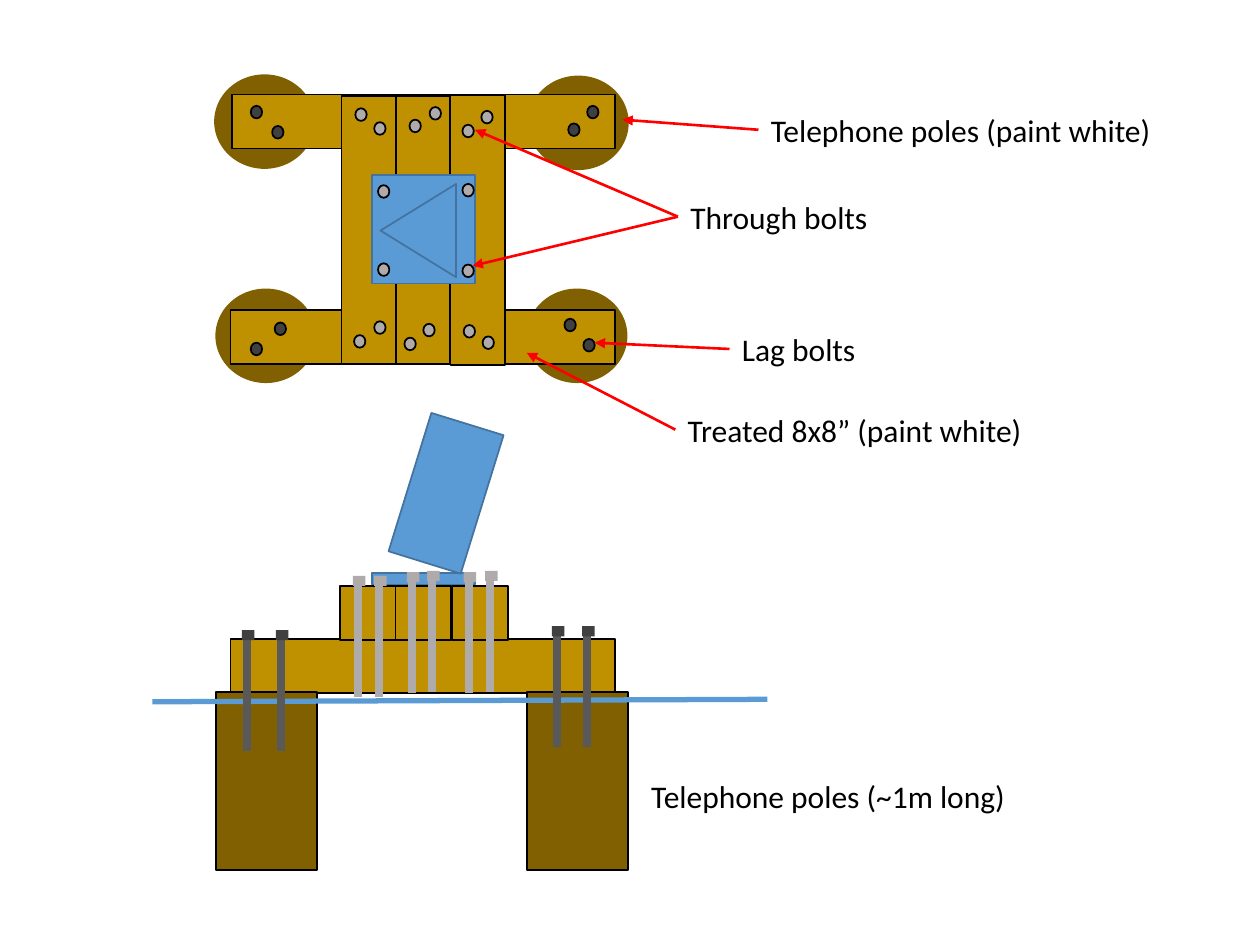
from lxml import etree
from pptx import Presentation
from pptx.dml.color import RGBColor
from pptx.enum.shapes import MSO_CONNECTOR, MSO_SHAPE
from pptx.enum.text import MSO_AUTO_SIZE
from pptx.oxml.ns import qn
from pptx.util import Inches, Pt

RECT = MSO_SHAPE.RECTANGLE
OVAL = MSO_SHAPE.OVAL
TRIANGLE = MSO_SHAPE.ISOSCELES_TRIANGLE
STRAIGHT = MSO_CONNECTOR.STRAIGHT
FIT_SHAPE = MSO_AUTO_SIZE.SHAPE_TO_FIT_TEXT

POLE = RGBColor(0x80, 0x60, 0x00)
TIMBER = RGBColor(0xBF, 0x90, 0x00)
BLUE = RGBColor(0x5B, 0x9B, 0xD5)
BLUE_EDGE = RGBColor(0x43, 0x73, 0x9E)
LAG = RGBColor(0x40, 0x40, 0x40)
LAG_SHAFT = RGBColor(0x59, 0x59, 0x59)
THROUGH = RGBColor(0xAF, 0xAB, 0xAB)
RED = RGBColor(0xFF, 0x00, 0x00)
BLACK = RGBColor(0x00, 0x00, 0x00)


def add_part(shapes, kind, box, fill, edge=None, rotation=0):
    sp = shapes.add_shape(kind, *(Inches(v) for v in box))
    sp.shadow.inherit = False
    sp.rotation = rotation
    sp.fill.solid()
    sp.fill.fore_color.rgb = fill
    if edge is None:
        sp.line.fill.background()
    else:
        sp.line.color.rgb = edge
        sp.line.width = Pt(1)
    return sp


def add_line(shapes, start, end, color, width):
    line = shapes.add_connector(STRAIGHT, *(Inches(v) for v in start + end))
    line.line.color.rgb = color
    line.line.width = Pt(width)
    etree.SubElement(line._element.spPr, qn("a:effectLst"))
    return line


prs = Presentation()
prs.slide_width = Inches(10)
prs.slide_height = Inches(7.5)
s = prs.slides.add_slide(prs.slide_layouts[6])
shapes = s.shapes

# Top view: poles, beams, planks and the instrument plate
for x, y in [(1.7, 0.59), (4.19, 0.6), (1.71, 2.29), (4.18, 2.29)]:
    add_part(shapes, OVAL, (x, y, 0.8, 0.75), POLE)
for x, y, w in [(1.84, 0.75, 3.04), (1.83, 2.46, 3.05)]:
    add_part(shapes, RECT, (x, y, w, 0.43), TIMBER, BLACK)
for x, length in [(1.86, 2.13), (2.72, 2.14), (2.29, 2.13)]:
    add_part(shapes, RECT, (x, 1.61, length, 0.43), TIMBER, BLACK, 90)
add_part(shapes, RECT, (2.95, 1.39, 0.82, 0.86), BLUE, BLUE_EDGE)
add_part(shapes, TRIANGLE, (2.95, 1.53, 0.74, 0.6), BLUE, BLUE_EDGE, 270)

# Top view: bolt heads
lag_heads = [(1.99, 0.84), (2.16, 1), (1.99, 2.72), (2.18, 2.56),
             (4.66, 0.84), (4.51, 0.98), (4.63, 2.69), (4.48, 2.53)]
through_heads = [(2.82, 0.86), (2.97, 0.97), (3.25, 0.95), (3.41, 0.85),
                 (3.67, 0.99), (3.82, 0.88),
                 (3, 1.47), (3.67, 1.46), (3, 2.09), (3.67, 2.1),
                 (2.81, 2.66), (2.97, 2.55), (3.21, 2.68), (3.36, 2.57),
                 (3.68, 2.58), (3.83, 2.67)]
for heads, color in [(lag_heads, LAG), (through_heads, THROUGH)]:
    for x, y in heads:
        add_part(shapes, OVAL, (x, y, 0.09, 0.1), color, BLACK)

# Side view: timbers, poles, ground line and instrument
add_part(shapes, RECT, (1.83, 5.07, 3.05, 0.43), TIMBER, BLACK)
for x in (2.7, 3.14, 3.59):
    add_part(shapes, RECT, (x, 4.65, 0.44, 0.43), TIMBER, BLACK)
for x in (1.41, 3.88):
    add_part(shapes, RECT, (x, 5.8, 1.41, 0.8), POLE, BLACK, 90)
add_line(shapes, (1.21, 5.57), (6.09, 5.55), BLUE, 3)
add_part(shapes, RECT, (2.95, 4.55, 0.82, 0.09), BLUE, BLUE_EDGE)
add_part(shapes, RECT, (3.24, 3.34, 0.6, 1.15), BLUE, BLUE_EDGE, 17.2)

# Side view: bolts, each a shaft with a head on top
lag_bolts = [(1.92, 5), (2.19, 5), (4.38, 4.97), (4.62, 4.97)]
through_bolts = [(2.8, 4.57), (2.97, 4.57), (3.23, 4.54), (3.39, 4.53),
                 (3.68, 4.54), (3.85, 4.53)]
for bolts, shaft_color, head_color in [(lag_bolts, LAG_SHAFT, LAG),
                                       (through_bolts, THROUGH, THROUGH)]:
    for x, y in bolts:
        bolt = shapes.add_group_shape().shapes
        add_line(bolt, (x + 0.04, y + 0.07), (x + 0.04, y + 0.96), shaft_color, 4.5)
        add_part(bolt, RECT, (x, y, 0.1, 0.08), head_color)

# Labels, each with arrows from its left side to the given points
labels = [
    ("Telephone poles (paint white)", 6.02, 0.83, 3.25, [(4.94, 0.95)]),
    ("Treated 8x8” (paint white)", 5.36, 3.21, 2.88, [(4.18, 2.8)]),
    ("Through bolts", 5.38, 1.52, 1.62, [(3.77, 1.03), (3.75, 2.11)]),
    ("Lag bolts", 5.79, 2.57, 1.11, [(4.72, 2.72)]),
    ("Telephone poles (~1m long)", 5.07, 6.12, 3.05, []),
]
for text, x, y, w, targets in labels:
    label = shapes.add_textbox(Inches(x), Inches(y), Inches(w), Inches(0.4))
    tf = label.text_frame
    tf.word_wrap = False
    tf.auto_size = FIT_SHAPE
    p = tf.paragraphs[0]
    p.text = text
    p.font.name = "Calibri"
    p.font.size = Pt(18)
    p.font.color.rgb = BLACK
    for target in targets:
        arrow = add_line(shapes, (x, y + 0.2), target, RED, 1.5)
        arrow.begin_connect(label, 1)
        etree.SubElement(arrow.line._get_or_add_ln(), qn("a:tailEnd"), type="triangle")

prs.save("out.pptx")
